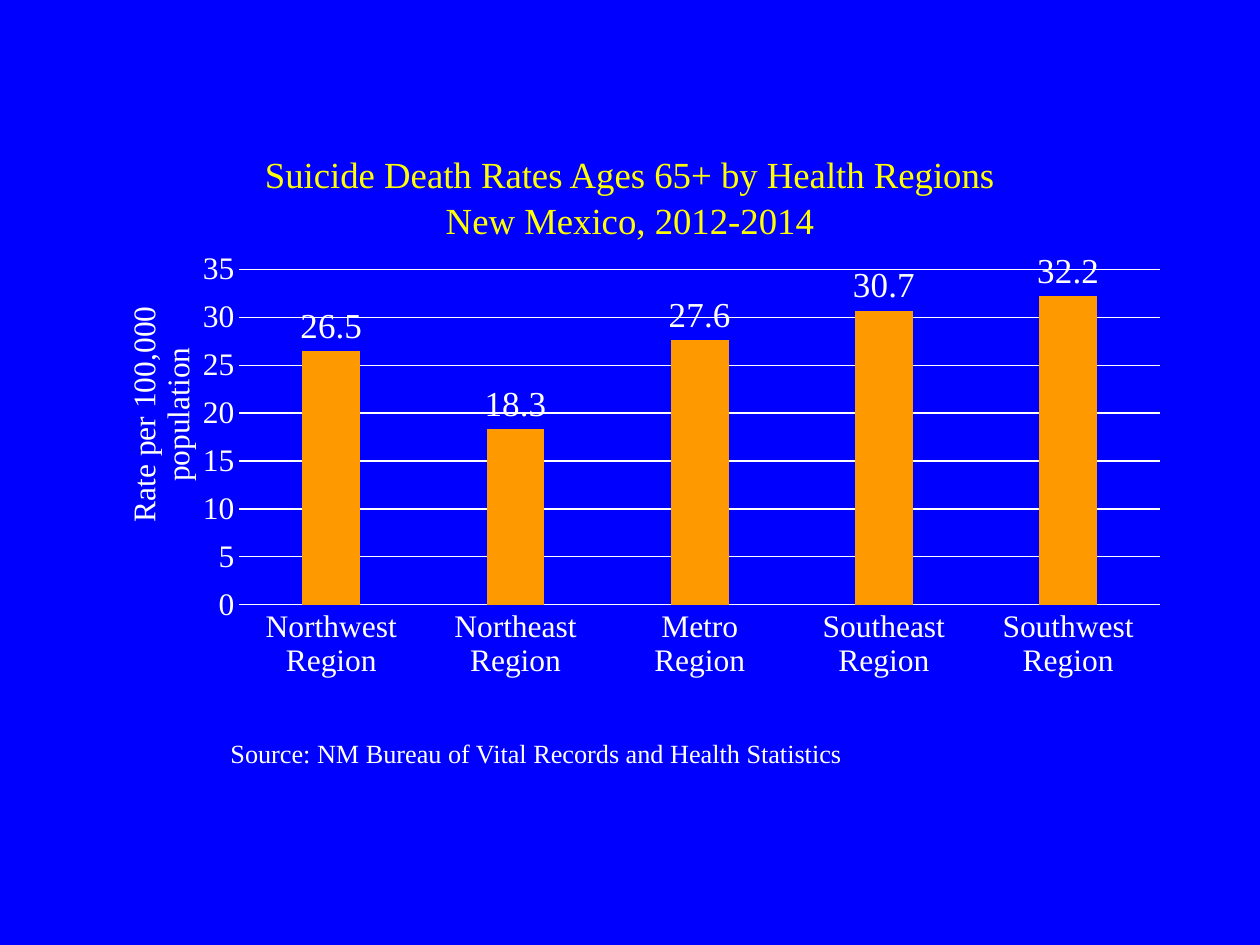
import pptx
import pptx.util
import pptx.chart.data
import pptx.dml.color
import pptx.enum.chart
import pptx.enum.text
import pptx.oxml

FONT = "Times New Roman"
WHITE, YELLOW, ORANGE, BLUE = "FFFFFF", "FFFF00", "FF9900", "0000FF"
REGIONS = ["Northwest", "Northeast", "Metro", "Southeast", "Southwest"]
RATES = [26.5, 18.3, 27.6, 30.7, 32.2]


def px(n):
    return pptx.util.Emu(round(n * 914400 / 126))


def rgb(value):
    return pptx.dml.color.RGBColor.from_string(value)


def set_font(font, size, color):
    font.name = FONT
    font.size = pptx.util.Pt(size)
    font.bold = False
    font.color.rgb = rgb(color)


def set_line(line, color):
    line.color.rgb = rgb(color)
    line.width = pptx.util.Pt(0.75)


def add_layout(parent, index, x, y, w=None, h=None, inner=False):
    """Place a chart part by fractions of the chart's size."""
    values = [("layoutTarget", "inner")] if inner else []
    values += [("xMode", "edge"), ("yMode", "edge"), ("x", x), ("y", y)]
    if w is not None:
        values += [("w", w), ("h", h)]
    items = "".join(f'<c:{tag} val="{value}"/>' for tag, value in values)
    for old in parent.findall(pptx.oxml.ns.qn("c:layout")):
        parent.remove(old)
    parent.insert(index, pptx.oxml.parse_xml(
        f'<c:layout {pptx.oxml.ns.nsdecls("c")}>'
        f'<c:manualLayout>{items}</c:manualLayout></c:layout>'))


def add_text(s, box, text, size, color, align, top_inset=6, spacing=1.0):
    tf = s.shapes.add_textbox(*map(px, box)).text_frame
    tf.word_wrap = True
    tf.margin_top = px(top_inset)
    p = tf.paragraphs[0]
    p.text = text
    p.alignment = align
    p.line_spacing = spacing
    set_font(p.font, size, color)


def add_rate_chart(s, box):
    data = pptx.chart.data.CategoryChartData()
    data.categories = [f"{name} Region" for name in REGIONS]
    data.add_series("Series 1", RATES)
    chart = s.shapes.add_chart(
        pptx.enum.chart.XL_CHART_TYPE.COLUMN_CLUSTERED, *map(px, box), data).chart
    chart.has_legend = False
    chart.has_title = False
    set_font(chart.font, 18, WHITE)

    # Columns and their values
    plot = chart.plots[0]
    plot.gap_width = 219
    plot.overlap = -27
    plot.vary_by_categories = False
    fill = plot.series[0].format.fill
    fill.solid()
    fill.fore_color.rgb = rgb(ORANGE)
    plot.has_data_labels = True
    labels = plot.data_labels
    labels.show_value = True
    labels.position = pptx.enum.chart.XL_LABEL_POSITION.OUTSIDE_END
    set_font(labels.font, 20, WHITE)

    # Axes
    cat, val = chart.category_axis, chart.value_axis
    for axis in (cat, val):
        axis.major_tick_mark = pptx.enum.chart.XL_TICK_MARK.NONE
        axis.minor_tick_mark = pptx.enum.chart.XL_TICK_MARK.NONE
        set_font(axis.tick_labels.font, 18, WHITE)
    set_line(cat.format.line, WHITE)
    val.format.line.fill.background()
    val.minimum_scale, val.maximum_scale, val.major_unit = 0, 35, 5
    val.has_major_gridlines = True
    set_line(val.major_gridlines.format.line, WHITE)

    # Value axis title
    title = val.axis_title
    tf = title.text_frame
    tf.text = "Rate per 100,000\npopulation"
    for p in tf.paragraphs:
        p.alignment = pptx.enum.text.PP_ALIGN.CENTER
        set_font(p.font, 18, WHITE)
    body = tf._txBody.bodyPr
    body.set("rot", "-5400000")
    body.set("vert", "horz")
    add_layout(title._element, 1, 0.02, 0.12)
    add_layout(chart._chartSpace.chart.plotArea, 0, 0.13, 0.04, 0.86, 0.79, inner=True)


def main():
    prs = pptx.Presentation()
    prs.slide_width, prs.slide_height = px(1260), px(945)
    s = prs.slides.add_slide(prs.slide_layouts[6])
    fill = s.background.fill
    fill.solid()
    fill.fore_color.rgb = rgb(BLUE)

    align = pptx.enum.text.PP_ALIGN
    add_text(s, (228, 141, 804, 118),
             "Suicide Death Rates Ages 65+ by Health Regions\vNew Mexico, 2012-2014",
             21, YELLOW, align.CENTER, top_inset=9, spacing=1.04)
    add_rate_chart(s, (100, 252, 1071, 426))
    add_text(s, (218, 731, 788, 44),
             "Source: NM Bureau of Vital Records and Health Statistics",
             15, WHITE, align.LEFT)
    prs.save("out.pptx")


if __name__ == "__main__":
    main()
